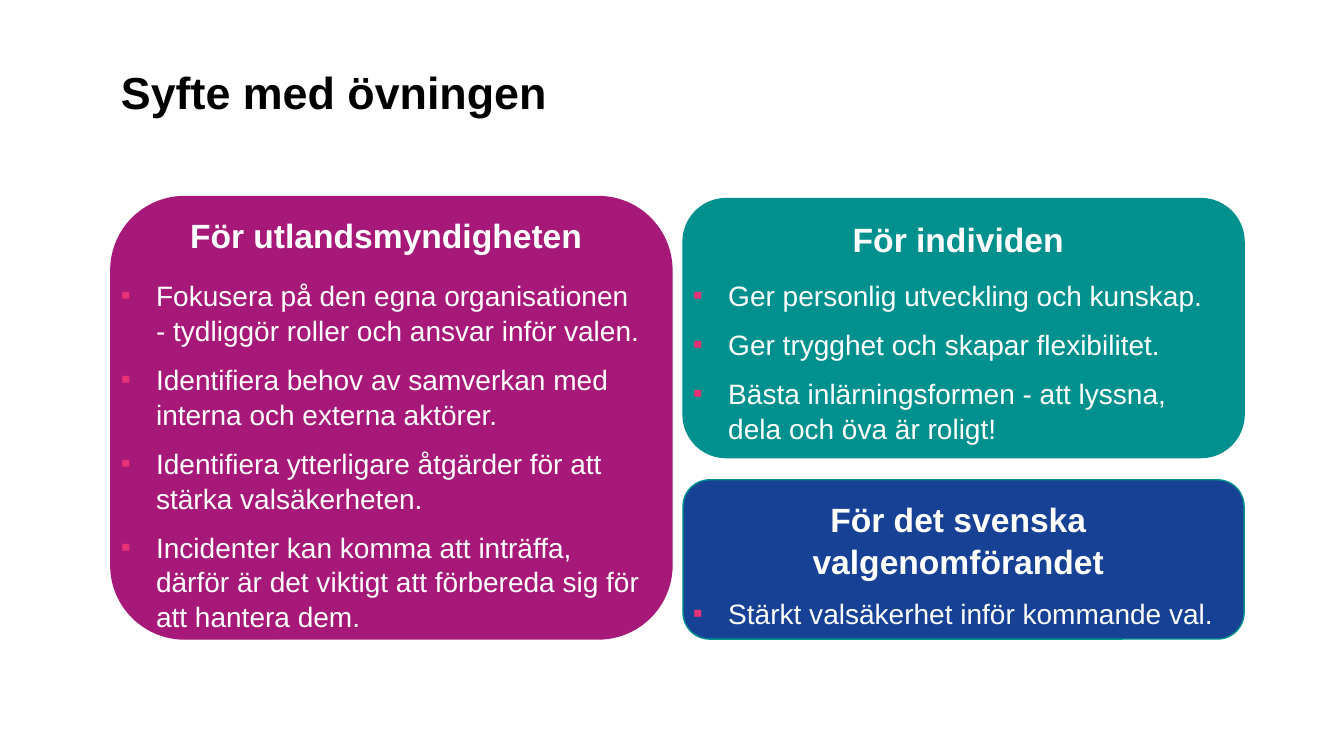
from lxml import etree
from pptx import Presentation
from pptx import util as u
from pptx.dml.color import RGBColor
from pptx.enum import shapes, text
from pptx.oxml.ns import qn

# Shares of the slide's size, in percent
LEFT, RIGHT = 8.25, 50.82
CARD_WIDTH, TEXT_WIDTH = 41.75, 40.95
HEADING_HEIGHT, POINTS_TOP, POINTS_HEIGHT = 9.33, 36, 55.07

MAGENTA, TEAL, BLUE, PINK = "A71979", "00918E", "164194", "E83278"
BLACK, WHITE = "000000", "FFFFFF"

INSTITUTION_POINTS = [
    "Fokusera på den egna organisationen\v- tydliggör roller och ansvar inför valen.",
    "Identifiera behov av samverkan med interna och externa aktörer.",
    "Identifiera ytterligare åtgärder för att stärka valsäkerheten.",
    "Incidenter kan komma att inträffa, därför är det viktigt att förbereda sig för att hantera dem.",
]
PERSON_POINTS = [
    "Ger personlig utveckling och kunskap.",
    "Ger trygghet och skapar flexibilitet.",
    "Bästa inlärningsformen - att lyssna, dela och öva är roligt!",
]
ELECTION_POINTS = ["Stärkt valsäkerhet inför kommande val."]


def colour(value):
    return RGBColor.from_string(value)


def apply(target, values):
    for name, value in values.items():
        setattr(target, name, value)


class SlideBuilder:
    title_font = {"name": "Arial", "size": u.Pt(32), "bold": True}
    heading_font = {"name": "Arial", "size": u.Pt(24), "bold": True}
    point_font = {"name": "Arial", "size": u.Pt(20), "bold": False}
    title_format = {"alignment": text.PP_ALIGN.LEFT, "line_spacing": 0.9}
    heading_format = {"alignment": text.PP_ALIGN.CENTER, "line_spacing": 1.04}
    point_format = {"alignment": text.PP_ALIGN.LEFT, "line_spacing": 1.04}

    def __init__(self, deck):
        self.deck = deck
        self.page = deck.slides.add_slide(deck.slide_layouts[5])

    def area(self, left, top, width, height):
        """Turn percentages of the slide into lengths."""
        across, down = self.deck.slide_width / 100, self.deck.slide_height / 100
        return [round(n) for n in (left * across, top * down, width * across, height * down)]

    def fill_para(self, para, wording, layout, font, ink):
        para.text = wording
        apply(para, layout)
        for span in para.runs:
            apply(span.font, font)
            span.font.color.rgb = colour(ink)

    def bullet(self, para):
        props = para._p.get_or_add_pPr()
        props.set("marL", str(u.Inches(0.35)))
        props.set("indent", str(-u.Inches(0.35)))
        tint = etree.SubElement(props, qn("a:buClr"))
        etree.SubElement(tint, qn("a:srgbClr"), val=PINK)
        etree.SubElement(props, qn("a:buFont"), typeface="Arial")
        etree.SubElement(props, qn("a:buChar"), char="▪")

    def title(self, wording, *place):
        box = self.page.shapes.title
        apply(box, dict(zip(("left", "top", "width", "height"), self.area(*place))))
        apply(box.text_frame, {"vertical_anchor": text.MSO_ANCHOR.BOTTOM, "word_wrap": True,
                               "auto_size": text.MSO_AUTO_SIZE.NONE})
        self.fill_para(box.text_frame.paragraphs[0], wording, self.title_format, self.title_font, BLACK)

    def card(self, fill, line, *place):
        card = self.page.shapes.add_shape(shapes.MSO_SHAPE.ROUNDED_RECTANGLE, *self.area(*place))
        card.shadow.inherit = False
        card.fill.solid()
        card.fill.fore_color.rgb = colour(fill)
        card.line.color.rgb = colour(line)
        card.line.width = u.Pt(1)

    def textbox(self, place, heading=None, points=(), anchor=text.MSO_ANCHOR.TOP):
        frame = self.page.shapes.add_textbox(*self.area(*place)).text_frame
        apply(frame, {"word_wrap": True, "vertical_anchor": anchor})
        entries = [(heading, False)] if heading else []
        entries += [(point, True) for point in points]
        for index, (wording, is_point) in enumerate(entries):
            para = frame.add_paragraph() if index else frame.paragraphs[0]
            if index:
                para.space_before = u.Pt(10)
            if is_point:
                self.bullet(para)
                self.fill_para(para, wording, self.point_format, self.point_font, WHITE)
            else:
                self.fill_para(para, wording, self.heading_format, self.heading_font, WHITE)


def main():
    deck = Presentation()
    deck.slide_width, deck.slide_height = u.Inches(13.33), u.Inches(7.5)
    slide = SlideBuilder(deck)
    slide.title("Syfte med övningen", LEFT, 5.87, 83.5, 10.53)

    # Upper cards, each with a heading and a list
    for left, top, height, fill, heading_top, heading, points in (
        (LEFT, 26, 58.53, MAGENTA, 25.07, "För utlandsmyndigheten", INSTITUTION_POINTS),
        (RIGHT, 26.27, 34.27, TEAL, 25.6, "För individen", PERSON_POINTS),
    ):
        slide.card(fill, fill, left, top, CARD_WIDTH, height)
        slide.textbox((left, heading_top, TEXT_WIDTH, HEADING_HEIGHT), heading,
                      anchor=text.MSO_ANCHOR.BOTTOM)
        slide.textbox((left, POINTS_TOP, TEXT_WIDTH, POINTS_HEIGHT), points=points)

    # Lower card, heading and list in one box
    slide.card(BLUE, TEAL, RIGHT, 63.47, CARD_WIDTH, 21.07)
    slide.textbox((RIGHT, 65.07, TEXT_WIDTH, 8.13), "För det svenska valgenomförandet", ELECTION_POINTS)

    deck.save("out.pptx")


if __name__ == "__main__":
    main()
